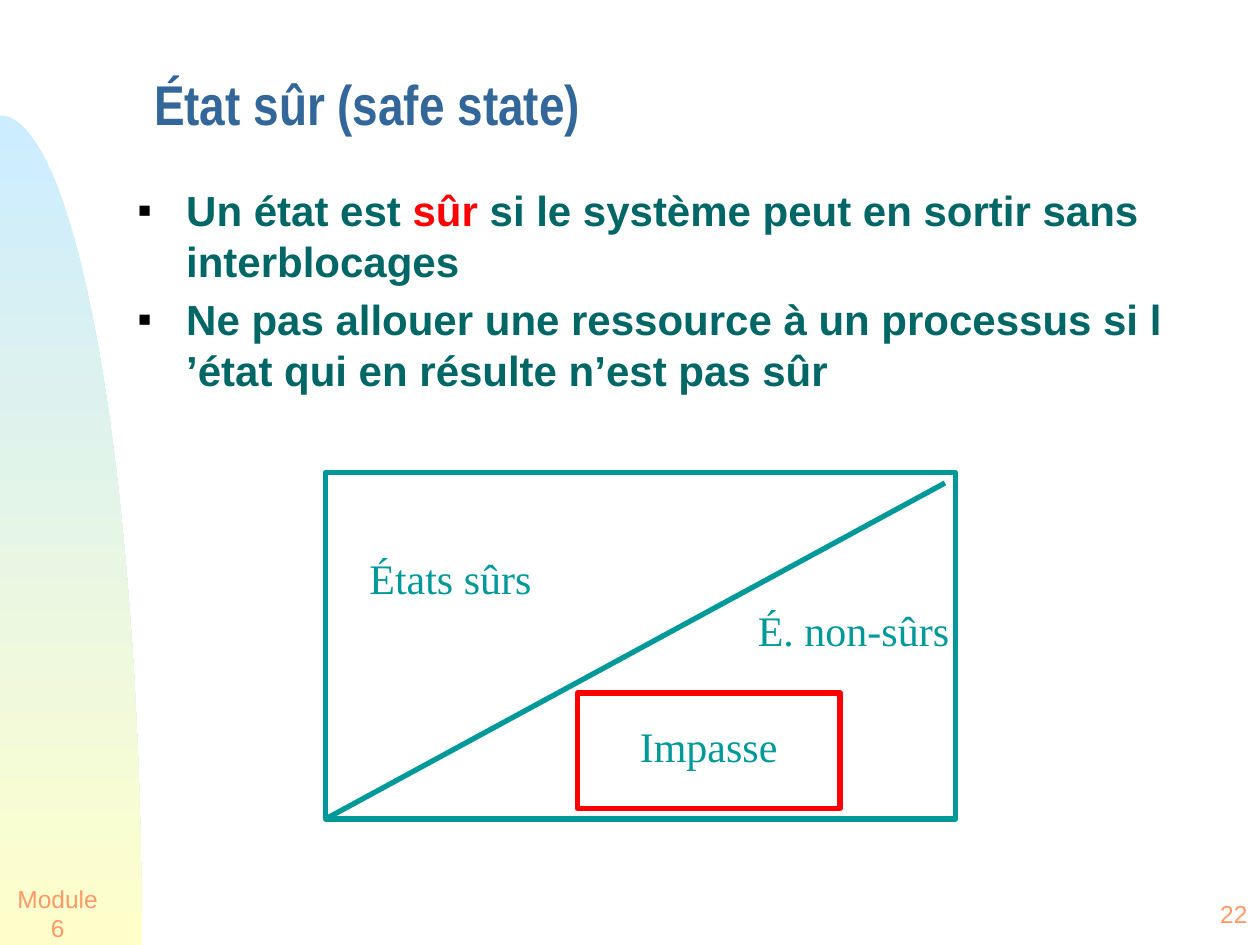
from dataclasses import dataclass
from math import cos, pi, sin

from lxml.etree import SubElement
from pptx import Presentation
from pptx.dml.color import RGBColor
from pptx.enum.shapes import MSO_CONNECTOR, MSO_SHAPE
from pptx.enum.text import MSO_ANCHOR, PP_ALIGN
from pptx.oxml.ns import qn
from pptx.util import Inches, Length, Pt

CELL = 1 / 12  # grid of 120 columns by 90 rows, in inches
COLUMNS, ROWS = 120, 90
TEAL, RED, DARK_TEAL, BLUE, ORANGE = "009999", "FF0000", "006666", "336699", "FF9966"


@dataclass
class Area:
    col: float
    row: float
    cols: float
    rows: float

    def lengths(self) -> list[Length]:
        return [grid(n) for n in (self.col, self.row, self.cols, self.rows)]


@dataclass
class Label:
    text: str
    area: Area
    font: str
    size: float
    color: str
    align: PP_ALIGN = PP_ALIGN.LEFT
    anchor: MSO_ANCHOR = MSO_ANCHOR.TOP
    bold: bool = False
    wrap: bool = True
    line_spacing: float = 1.0


@dataclass
class Frame:
    area: Area
    color: str


def grid(cells: float) -> Length:
    return Inches(cells * CELL)


def rgb(color: str) -> RGBColor:
    return RGBColor.from_string(color)


def set_font(font, name: str, size: float, color: str, bold: bool) -> None:
    font.name, font.size, font.bold = name, Pt(size), bold
    font.color.rgb = rgb(color)


def set_stroke(line, color: str) -> None:
    line.color.rgb = rgb(color)
    line.width = Pt(3)


def draw_label(slide, label: Label) -> None:
    frame = slide.shapes.add_textbox(*label.area.lengths()).text_frame
    frame.word_wrap = label.wrap
    frame.vertical_anchor = label.anchor
    paragraph = frame.paragraphs[0]
    paragraph.text = label.text
    paragraph.alignment = label.align
    paragraph.line_spacing = label.line_spacing
    set_font(paragraph.font, label.font, label.size, label.color, label.bold)


def draw_frame(slide, frame: Frame) -> None:
    box = slide.shapes.add_shape(MSO_SHAPE.RECTANGLE, *frame.area.lengths())
    box.shadow.inherit = False
    box.fill.background()
    set_stroke(box.line, frame.color)


def draw_line(slide, start: tuple[float, float], end: tuple[float, float], color: str) -> None:
    ends = [grid(n) for n in (*start, *end)]
    line = slide.shapes.add_connector(MSO_CONNECTOR.STRAIGHT, *ends)
    set_stroke(line.line, color)
    SubElement(line._element.spPr, qn("a:effectLst"))


def draw_arc_panel(slide, width: float, height: float, steps: int = 60) -> None:
    """Quarter ellipse standing in the lower left corner, with a vertical gradient."""
    angles = [pi / 2 * (1 - i / steps) for i in range(steps + 1)]
    arc = [(grid(width * cos(a)), grid(ROWS - height * sin(a))) for a in angles]
    builder = slide.shapes.build_freeform(*arc[0], scale=1.0)
    builder.add_line_segments([*arc[1:], (0, grid(ROWS))], close=True)
    panel = builder.convert_to_shape()
    panel.shadow.inherit = False
    panel.line.fill.background()
    panel.fill.gradient()
    panel.fill.gradient_angle = 270
    for stop, color in zip(panel.fill.gradient_stops, ("CCECFF", "FFFFCC")):
        stop.color.rgb = rgb(color)


def add_bullet(paragraph) -> None:
    properties = paragraph._p.get_or_add_pPr()
    properties.set("marL", str(Inches(0.38)))
    properties.set("indent", str(-Inches(0.38)))
    color = SubElement(properties, qn("a:buClr"))
    SubElement(color, qn("a:srgbClr"), val="010000")
    SubElement(properties, qn("a:buSzPct"), val="50000")
    SubElement(properties, qn("a:buFont"), typeface="Arial")
    SubElement(properties, qn("a:buChar"), char="■")


def draw_bullets(slide, area: Area, points: list[list[tuple[str, str]]]) -> None:
    frame = slide.shapes.add_textbox(*area.lengths()).text_frame
    frame.word_wrap = True
    for i, pieces in enumerate(points):
        paragraph = frame.add_paragraph() if i else frame.paragraphs[0]
        paragraph.space_before = Pt(4.8)
        add_bullet(paragraph)
        set_font(paragraph.font, "Arial", 24, DARK_TEAL, True)
        for text, color in pieces:
            run = paragraph.add_run()
            run.text = text
            set_font(run.font, "Arial", 24, color, True)


MIDDLE = MSO_ANCHOR.MIDDLE
TITLE = Label("État sûr (safe state)", Area(13.5, 4.3, 103.5, 12.6), "Arial Narrow", 32, BLUE,
              anchor=MIDDLE, bold=True, line_spacing=0.7)
FOOTERS = [
    Label("Module 6", Area(0, 84, 11, 6), "Arial", 14, ORANGE, PP_ALIGN.CENTER, MIDDLE, wrap=False),
    Label("22", Area(111.6, 84, 8.4, 6), "Arial", 14, ORANGE, PP_ALIGN.RIGHT, MIDDLE, wrap=False),
]
POINTS = [
    [("Un état est ", DARK_TEAL), ("sûr", RED),
     (" si le système peut en sortir sans interblocages", DARK_TEAL)],
    [("Ne pas allouer une ressource à un processus si l ’état qui en résulte n’est pas sûr",
      DARK_TEAL)],
]
ALL_STATES = Frame(Area(31, 45, 60, 33), TEAL)
DEADLOCK = Frame(Area(55, 66, 25, 11), RED)
STATE_NAMES = [
    Label("États sûrs", Area(34, 52, 28, 6), "Times New Roman", 24, TEAL),
    Label("É. non-sûrs", Area(71, 57, 25, 6), "Times New Roman", 24, TEAL),
    Label("Impasse", Area(56, 68, 23, 6), "Times New Roman", 24, TEAL, PP_ALIGN.CENTER),
]


def main() -> None:
    deck = Presentation()
    deck.slide_width, deck.slide_height = grid(COLUMNS), grid(ROWS)
    slide = deck.slides.add_slide(deck.slide_layouts[6])

    # Side decoration and footers
    draw_arc_panel(slide, width=13.5, height=79)
    for footer in FOOTERS:
        draw_label(slide, footer)

    # Title and definition
    draw_label(slide, TITLE)
    draw_bullets(slide, Area(12, 17, 103.5, 62.5), POINTS)

    # Diagram of the states
    draw_frame(slide, ALL_STATES)
    draw_line(slide, (31, 78), (90, 46), TEAL)
    draw_frame(slide, DEADLOCK)
    for name in STATE_NAMES:
        draw_label(slide, name)

    deck.save("out.pptx")


if __name__ == "__main__":
    main()
